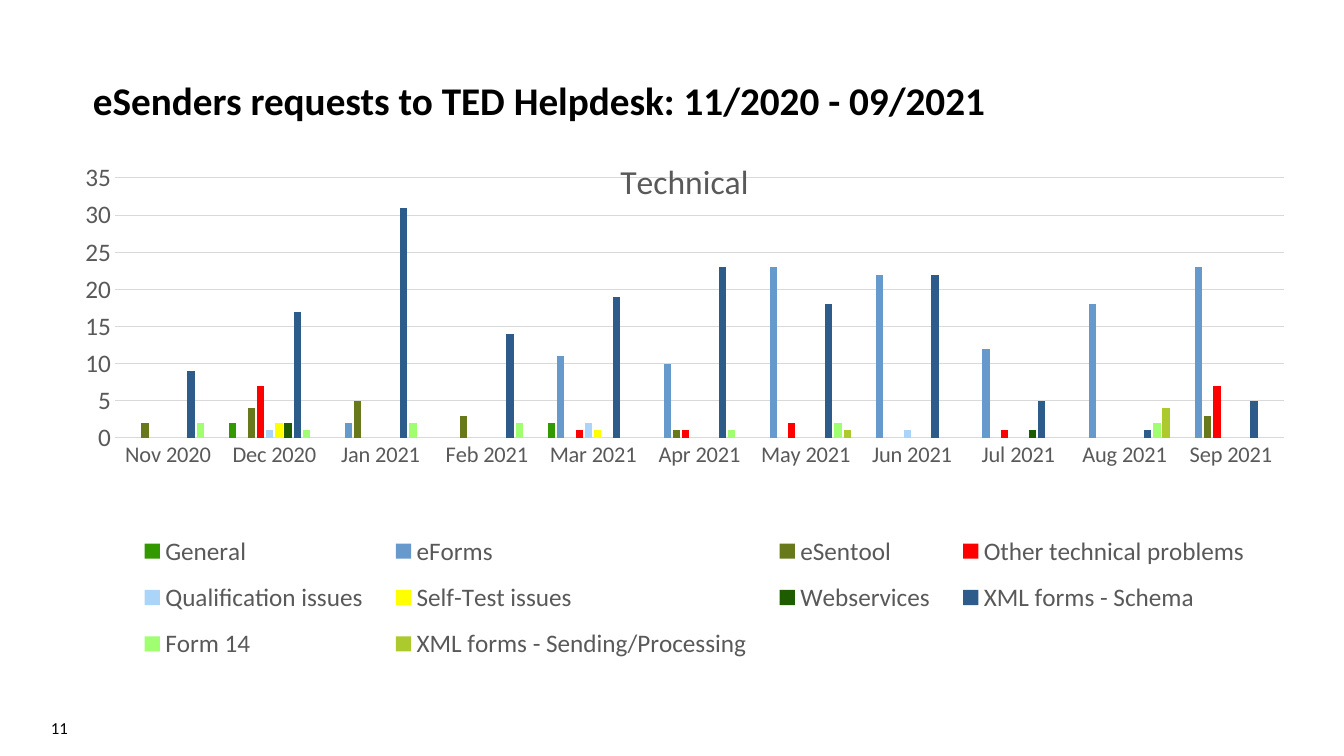
from lxml import etree
from pptx import Presentation
from pptx.chart.data import CategoryChartData
from pptx.dml.color import RGBColor
from pptx.enum.chart import XL_CHART_TYPE, XL_LEGEND_POSITION, XL_TICK_MARK
from pptx.enum.text import MSO_ANCHOR, PP_ALIGN
from pptx.oxml.ns import qn
from pptx.util import Pt

COLUMNS = XL_CHART_TYPE.COLUMN_CLUSTERED
LEGEND_BOTTOM = XL_LEGEND_POSITION.BOTTOM
NO_TICKS = XL_TICK_MARK.NONE
ANCHOR_BOTTOM, ANCHOR_MIDDLE = MSO_ANCHOR.BOTTOM, MSO_ANCHOR.MIDDLE
ALIGN_LEFT, ALIGN_RIGHT = PP_ALIGN.LEFT, PP_ALIGN.RIGHT
PX = 914400 / 100.8

THEME = {
    "font": "Calibri",
    "black": RGBColor.from_string("000000"),
    "grey": RGBColor.from_string("595959"),
    "grid": RGBColor.from_string("D9D9D9"),
    "heading": Pt(28),
    "chart_title": Pt(24),
    "label": Pt(18),
    "month": Pt(16),
    "number": Pt(12),
    "line": Pt(0.75),
}

MONTHS = ["Nov 2020", "Dec 2020", "Jan 2021", "Feb 2021", "Mar 2021", "Apr 2021",
          "May 2021", "Jun 2021", "Jul 2021", "Aug 2021", "Sep 2021"]
REQUESTS = [
    ("General", "339900", [None, 2, None, None, 2, None, None, None, None, None, None]),
    ("eForms", "6699CC", [None, None, 2, None, 11, 10, 23, 22, 12, 18, 23]),
    ("eSentool", "68791B", [2, 4, 5, 3, None, 1, None, None, None, None, 3]),
    ("Other technical problems", "FF0000", [None, 7, None, None, 1, 1, 2, None, 1, None, 7]),
    ("Qualification issues", "AAD5F9", [None, 1, None, None, 2, None, None, 1, None, None, None]),
    ("Self-Test issues", "FFFF00", [None, 2, None, None, 1, None, None, None, None, None, None]),
    ("Webservices", "1F5C00", [None, 2, None, None, None, None, None, None, 1, None, None]),
    ("XML forms - Schema", "2E5C8A", [9, 17, 31, 14, 19, 23, 18, 22, 5, 1, 5]),
    ("Form 14", "A0FF70", [2, 1, 2, 2, None, 1, 2, None, None, 2, None]),
    ("XML forms - Sending/Processing", "ACCA2D",
     [None, None, None, None, None, None, 1, None, None, 4, None]),
]


def style_font(font, size, color, bold=False):
    font.name = THEME["font"]
    font.size = size
    font.color.rgb = color
    font.bold = bold


def set_layout(parent, index, settings):
    for old_layout in parent.findall(qn("c:layout")):
        parent.remove(old_layout)
    layout = etree.Element(qn("c:layout"))
    manual = etree.SubElement(layout, qn("c:manualLayout"))
    for name, value in settings.items():
        etree.SubElement(manual, qn(f"c:{name}")).set("val", str(value))
    parent.insert(index, layout)


presentation = Presentation()
presentation.slide_width = round(1344 * PX)
presentation.slide_height = round(756 * PX)
slide = presentation.slides.add_slide(presentation.slide_layouts[6])

TEXTS = [
    ("eSenders requests to TED Helpdesk: 11/2020 - 09/2021", (93, 14, 1157, 110),
     THEME["heading"], True, ANCHOR_BOTTOM, ALIGN_LEFT, 0, 0.9),
    ("11", (0, 708, 78, 40),
     THEME["number"], False, ANCHOR_MIDDLE, ALIGN_RIGHT, 10, 1.0),
]
for text, box, size, bold, anchor, alignment, side_inset, spacing in TEXTS:
    shape = slide.shapes.add_textbox(*[round(length * PX) for length in box])
    frame = shape.text_frame
    frame.text = text
    frame.word_wrap = True
    frame.vertical_anchor = anchor
    frame.margin_left = frame.margin_right = round(side_inset * PX)
    frame.margin_top = round(5 * PX)
    frame.margin_bottom = 0 if anchor == ANCHOR_BOTTOM else round(5 * PX)
    paragraph = frame.paragraphs[0]
    paragraph.alignment = alignment
    paragraph.line_spacing = spacing
    style_font(paragraph.runs[0].font, size, THEME["black"], bold)

chart_data = CategoryChartData(number_format="#,##0")
chart_data.categories = MONTHS
for name, color, values in REQUESTS:
    chart_data.add_series(name, values)
chart_box = [round(length * PX) for length in (58, 124, 1236, 574)]
chart = slide.shapes.add_chart(COLUMNS, *chart_box, chart_data).chart
style_font(chart.font, THEME["label"], THEME["grey"])

chart.has_title = True
title_frame = chart.chart_title.text_frame
title_frame.text = "Technical"
style_font(title_frame.paragraphs[0].runs[0].font, THEME["chart_title"], THEME["grey"])
chart.has_legend = True
chart.legend.position = LEGEND_BOTTOM
chart.legend.include_in_layout = False
style_font(chart.legend.font, THEME["label"], THEME["grey"])

set_layout(chart.chart_title._element, 1,
           {"xMode": "edge", "yMode": "edge", "x": 0.45, "y": 0.05})
set_layout(chart.legend._element, 1,
           {"xMode": "edge", "yMode": "edge", "x": 0.05, "y": 0.69, "w": 0.93, "h": 0.27})
set_layout(chart._chartSpace.chart.plotArea, 0,
           {"layoutTarget": "inner", "xMode": "edge", "yMode": "edge",
            "x": 0.046, "y": 0.094, "w": 0.946, "h": 0.453})

plot = chart.plots[0]
plot.gap_width = 219
plot.overlap = -27
plot.vary_by_categories = False
for series, (name, color, values) in zip(plot.series, REQUESTS):
    series.format.fill.solid()
    series.format.fill.fore_color.rgb = RGBColor.from_string(color)
    series.invert_if_negative = False

month_axis, count_axis = chart.category_axis, chart.value_axis
for axis, size in ((month_axis, THEME["month"]), (count_axis, THEME["label"])):
    axis.major_tick_mark = axis.minor_tick_mark = NO_TICKS
    style_font(axis.tick_labels.font, size, THEME["grey"])
count_axis.minimum_scale = 0
count_axis.maximum_scale = 35
count_axis.major_unit = 5
count_axis.tick_labels.number_format = "#,##0"
count_axis.tick_labels.number_format_is_linked = False
count_axis.format.line.fill.background()
for line in (month_axis.format.line, count_axis.major_gridlines.format.line):
    line.color.rgb = THEME["grid"]
    line.width = THEME["line"]

presentation.save("out.pptx")
